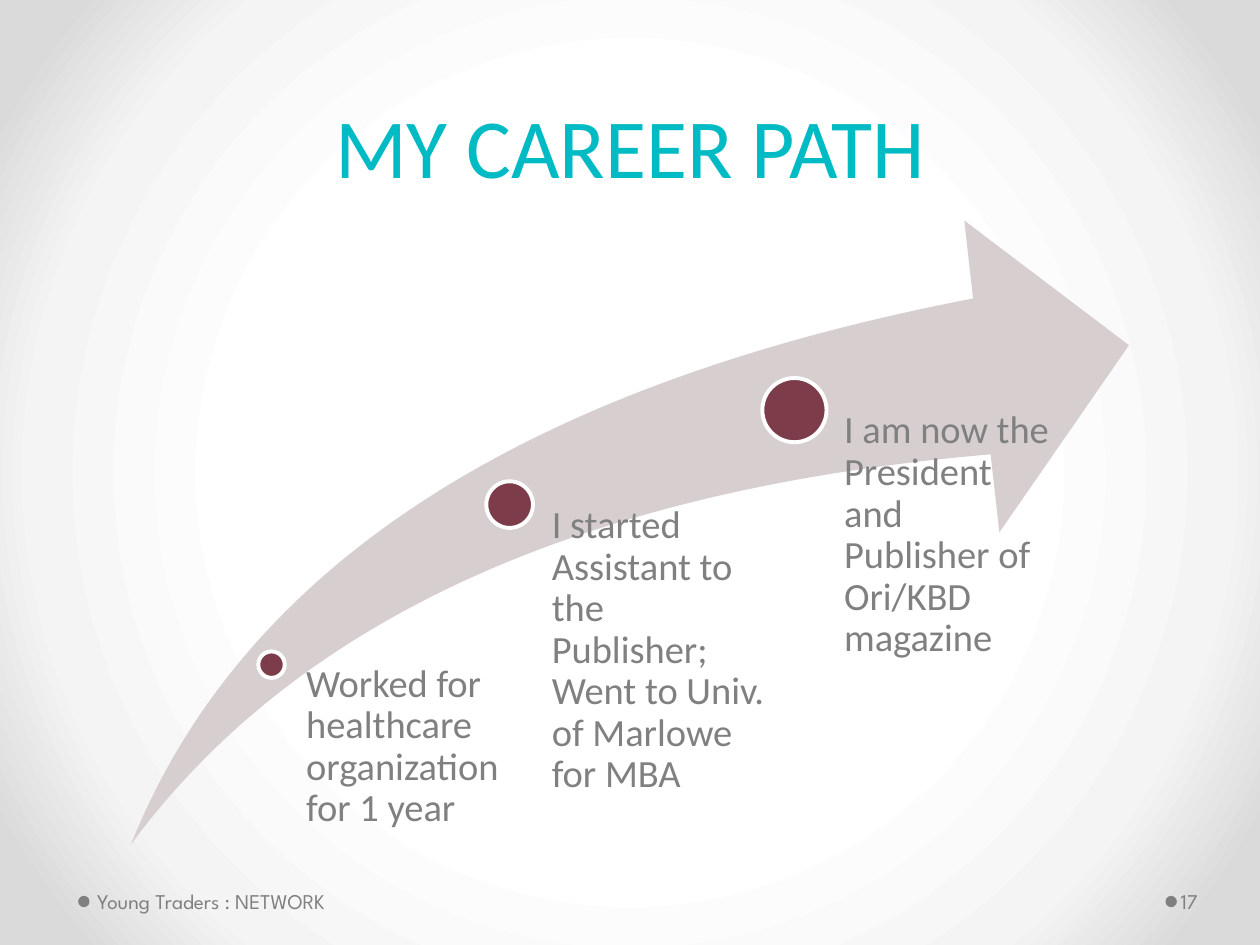
from pptx import Presentation
from pptx.dml.color import RGBColor
from pptx.enum.shapes import MSO_SHAPE
from pptx.enum.text import MSO_ANCHOR, MSO_AUTO_SIZE, PP_ALIGN
from pptx.oxml import parse_xml
from pptx.oxml.ns import nsdecls
from pptx.util import Inches, Pt

TEAL = RGBColor(0x00, 0xBA, 0xC4)
GRAY = RGBColor(0x80, 0x80, 0x80)
PALE_MAUVE = RGBColor(0xD7, 0xCE, 0xD0)
BURGUNDY = RGBColor(0x7D, 0x3C, 0x4A)
WHITE = RGBColor(0xFF, 0xFF, 0xFF)

BODY_FONT = "Calibri"
FOOTER_FONT = "League Spartan"
ARROW_BOTTOM = 6.7
BACKGROUND_STOPS = [(50, "FFFFFF"), (76, "F4F4F4"), (92, "DADADA")]

# Dot left, top, diameter; text left, top, width, left inset; wording
MILESTONES = [
    ((2.05, 5.17, 0.21), (2.32, 5.27, 1.85, 0.11),
     "Worked for healthcare organization for 1 year"),
    ((3.86, 3.82, 0.37), (4.18, 4.01, 1.9, 0.2),
     "I started Assistant to the Publisher; Went to Univ. of Marlowe for MBA"),
    ((6.05, 3, 0.51), (6.43, 3.26, 1.9, 0.27),
     "I am now the President and Publisher of Ori/KBD magazine"),
]


def set_background(slide):
    stops = "".join(
        f'<a:gs pos="{position * 1000}"><a:srgbClr val="{color}"/></a:gs>'
        for position, color in BACKGROUND_STOPS)
    slide.element.cSld.insert(0, parse_xml(
        f'<p:bg {nsdecls("p", "a")}><p:bgPr><a:gradFill rotWithShape="1">'
        f'<a:gsLst>{stops}</a:gsLst><a:path path="circle">'
        '<a:fillToRect l="50000" t="50000" r="50000" b="50000"/></a:path>'
        '</a:gradFill><a:effectLst/></p:bgPr></p:bg>'))


def format_font(paragraph, name, size, color):
    paragraph.font.name = name
    paragraph.font.size = Pt(size)
    paragraph.font.color.rgb = color


def add_title(slide, text):
    title = slide.shapes.title
    title.left, title.top = Inches(0.5), Inches(0.15)
    title.width, title.height = Inches(9), Inches(1.45)
    frame = title.text_frame
    frame.text = text
    frame.auto_size = MSO_AUTO_SIZE.NONE
    frame.vertical_anchor = MSO_ANCHOR.BOTTOM
    paragraph = frame.paragraphs[0]
    paragraph.alignment = PP_ALIGN.CENTER
    paragraph.line_spacing = Pt(58)
    format_font(paragraph, BODY_FONT, 48, TEAL)


def add_filled_shape(slide, kind, left, top, width, height, color):
    shape = slide.shapes.add_shape(
        kind, Inches(left), Inches(top), Inches(width), Inches(height))
    shape.shadow.inherit = False
    shape.fill.solid()
    shape.fill.fore_color.rgb = color
    shape.line.fill.background()
    return shape


def add_dot(slide, left, top, diameter, color):
    return add_filled_shape(
        slide, MSO_SHAPE.OVAL, left, top, diameter, diameter, color)


def add_text(slide, box, text, font, size, insets, anchor=MSO_ANCHOR.TOP):
    textbox = slide.shapes.add_textbox(*map(Inches, box))
    frame = textbox.text_frame
    frame.word_wrap = True
    frame.vertical_anchor = anchor
    (frame.margin_left, frame.margin_top,
     frame.margin_right, frame.margin_bottom) = map(Inches, insets)
    paragraph = frame.paragraphs[0]
    paragraph.text = text
    format_font(paragraph, font, size, GRAY)
    return paragraph


def add_milestone(slide, dot_box, text_box, text):
    dot = add_dot(slide, *dot_box, BURGUNDY)
    dot.line.color.rgb = WHITE
    dot.line.width = Pt(2.25)
    left, top, width, inset = text_box
    paragraph = add_text(slide, (left, top, width, ARROW_BOTTOM - top), text,
                         BODY_FONT, 22, (inset, 0, 0, 0))
    paragraph.line_spacing = 0.9


def add_footer(slide, dot_left, box, text, insets):
    add_dot(slide, dot_left, 7.11, 0.09, GRAY)
    add_text(slide, box, text, FOOTER_FONT, 12, insets, MSO_ANCHOR.MIDDLE)


def main():
    presentation = Presentation()
    presentation.slide_width = Inches(10)
    presentation.slide_height = Inches(7.5)
    slide = presentation.slides.add_slide(presentation.slide_layouts[5])
    set_background(slide)
    add_title(slide, "MY CAREER PATH")

    # Rising arrow with the career steps along it
    arrow = add_filled_shape(slide, MSO_SHAPE.SWOOSH_ARROW,
                             1.04, 1.75, 7.92, 4.95, PALE_MAUVE)
    arrow.adjustments[0] = 0.25
    arrow.adjustments[1] = 0.25
    for milestone in MILESTONES:
        add_milestone(slide, *milestone)

    # Footer and page number
    add_footer(slide, 0.62, (0.72, 6.95, 3.11, 0.4),
               "Young Traders : NETWORK", (0.05, 0.05, 0.1, 0.05))
    add_footer(slide, 9.25, (9.34, 6.95, 0.61, 0.4),
               "17", (0.03, 0.05, 0.05, 0.05))
    presentation.save("out.pptx")


if __name__ == "__main__":
    main()
